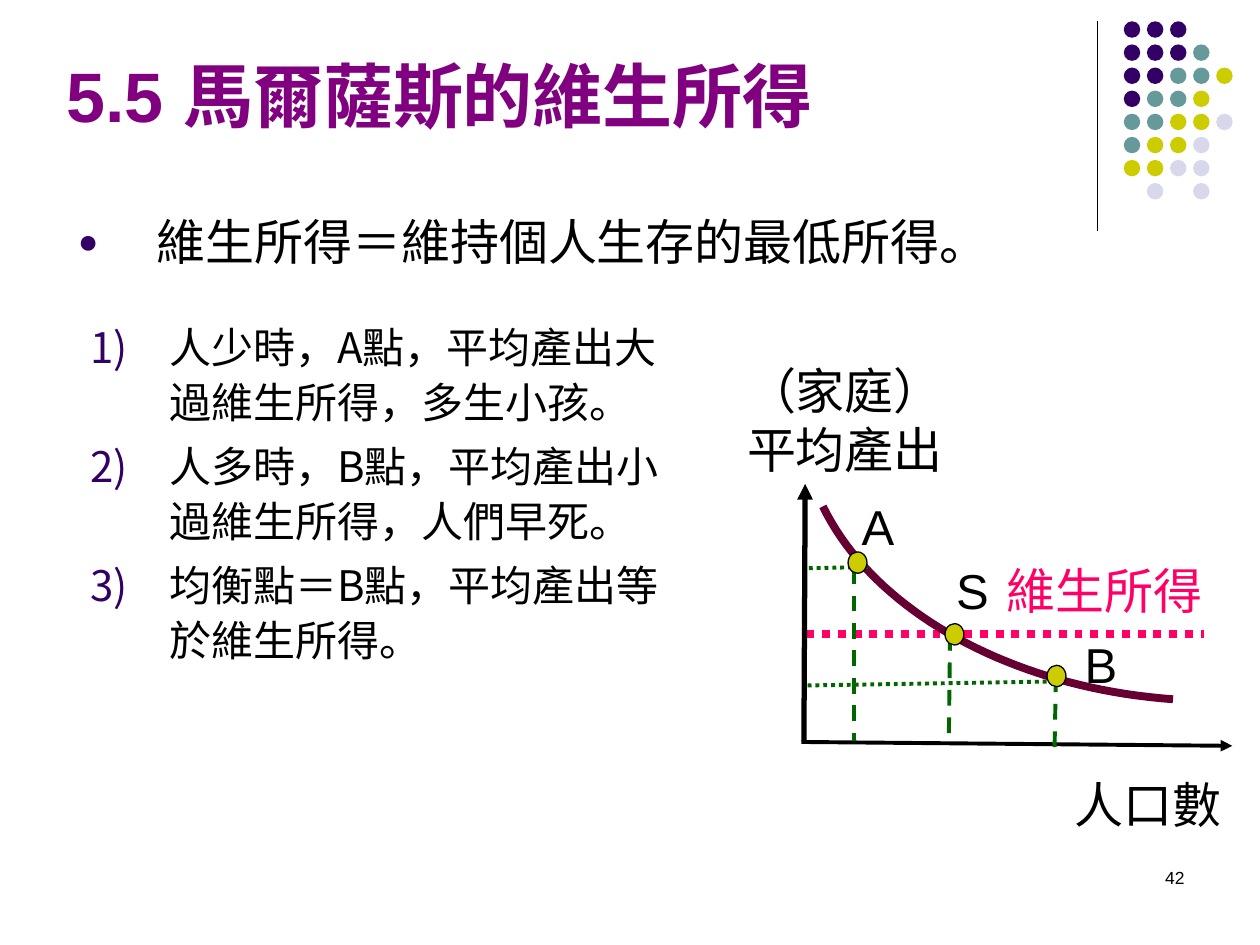
from lxml import etree
from pptx import Presentation
from pptx.dml.color import RGBColor
from pptx.enum.dml import MSO_LINE
from pptx.enum.shapes import MSO_CONNECTOR, MSO_SHAPE
from pptx.enum.text import MSO_ANCHOR, MSO_AUTO_SIZE, PP_ALIGN
from pptx.oxml.ns import qn
from pptx.util import Pt

OVAL = MSO_SHAPE.OVAL
STRAIGHT = MSO_CONNECTOR.STRAIGHT
DOT, DASH = MSO_LINE.ROUND_DOT, MSO_LINE.DASH
BOTTOM, TOP = MSO_ANCHOR.BOTTOM, MSO_ANCHOR.TOP
RIGHT = PP_ALIGN.RIGHT
FIT = MSO_AUTO_SIZE.SHAPE_TO_FIT_TEXT

CJK = "Noto Sans CJK TC"
BLACK, NAVY, GOLD = "000000", "330066", "CCCC00"
PINK, GREEN, WINE = "FF0066", "006600", "660033"

TITLE = "5.5 馬爾薩斯的維生所得"
LEAD = "維生所得＝維持個人生存的最低所得。"
STEPS = [
    "人少時，A點，平均產出大過維生所得，多生小孩。",
    "人多時，B點，平均產出小過維生所得，人們早死。",
    "均衡點＝B點，平均產出等於維生所得。",
]

# One letter per dot of the corner pattern
TINTS = {"n": NAVY, "t": "669999", "g": GOLD, "p": "D8D8EC"}
DOTS = ["nnn", "nnnt", "nnttg", "nttg", "ttggp", "tggp", "ggpp", " p p"]
DOT_X, DOT_Y, DOT_STEP, DOT_SIZE = 642.2, 12.2, 13.2, 9.4

# x1, y1, x2, y2, colour, width, dash, arrow
RULE = (627, 12, 627, 132, BLACK, 0.75, None, False)
AXES = [
    (460.8, 362.2, 688.3, 362.2, PINK, 4.5, DOT, False),
    (457.9, 424, 704.2, 426.2, BLACK, 2.25, None, True),
    (459.4, 423.4, 460.1, 276.5, BLACK, 3, None, True),
]
GUIDES = [
    (x1, y1, x2, y2, GREEN, 2.25, dash, False)
    for x1, y1, x2, y2, dash in [
        (542.9, 362.9, 542.2, 422.6, DASH),
        (488.2, 324.7, 488.2, 423.4, DASH),
        (462.2, 324.7, 496.8, 324, DOT),
        (603.4, 386.6, 602.6, 428.4, DASH),
        (461.5, 391.7, 598.3, 389.5, DOT),
    ]
]
CURVE = [(670.3, 399.6), (578.9, 393.1), (499.7, 349.9), (470.2, 289.4)]
POINTS = [(540, 356.4), (484.6, 315.4), (598.3, 380.2)]

# lines, left, top, width, height, colour
LABELS = [
    (["人口數"], 607, 439.2, 98.6, 41, BLACK),
    (["（家庭）", "平均產出"], 419.8, 202.3, 126.7, 74.2, BLACK),
    (["維生所得"], 568.1, 316.8, 126.7, 41, PINK),
    (["S"], 539.3, 316.8, 33.1, 41, BLACK),
    (["A"], 485.3, 280.1, 33.1, 41, BLACK),
    (["B"], 612.7, 359.3, 33.1, 41, BLACK),
]


def rgb(code):
    return RGBColor.from_string(code)


def add_line(shapes, x1, y1, x2, y2, color, width, dash, arrow):
    link = shapes.add_connector(STRAIGHT, Pt(x1), Pt(y1), Pt(x2), Pt(y2))
    link.line.color.rgb = rgb(color)
    link.line.width = Pt(width)
    if dash:
        link.line.dash_style = dash
    props = link._element.spPr
    if arrow:
        etree.SubElement(props.find(qn("a:ln")), qn("a:tailEnd"), type="triangle")
    etree.SubElement(props, qn("a:effectLst"))


def add_oval(shapes, x, y, w, h, color, edge=None):
    oval = shapes.add_shape(OVAL, Pt(x), Pt(y), Pt(w), Pt(h))
    oval.shadow.inherit = False
    oval.fill.solid()
    oval.fill.fore_color.rgb = rgb(color)
    if edge:
        oval.line.color.rgb = rgb(edge)
        oval.line.width = Pt(0.75)
    else:
        oval.line.fill.background()


def add_text(shapes, lines, x, y, w, h, color=BLACK, size=28, font="Arial",
             bold=False, wrap=True, anchor=TOP):
    """Add a text box with one paragraph per line; return its paragraphs."""
    box = shapes.add_textbox(Pt(x), Pt(y), Pt(w), Pt(h))
    frame = box.text_frame
    frame.word_wrap = wrap
    frame.vertical_anchor = anchor
    if not wrap:
        frame.auto_size = FIT
    for i, line in enumerate(lines):
        para = frame.add_paragraph() if i else frame.paragraphs[0]
        run = para.add_run()
        run.text = line
        run.font.name = font
        run.font.size = Pt(size)
        run.font.bold = bold
        run.font.color.rgb = rgb(color)
        etree.SubElement(run.font._element, qn("a:ea"), typeface=CJK)
    return frame.paragraphs


def add_bullet(para, spacing, before, kind, **attrs):
    """Give a paragraph a hanging indent and a navy bullet or number."""
    para.line_spacing = spacing
    para.space_before = Pt(before)
    props = para._p.get_or_add_pPr()
    props.set("marL", str(Pt(45)))
    props.set("indent", str(Pt(-45)))
    tint = etree.SubElement(props, qn("a:buClr"))
    etree.SubElement(tint, qn("a:srgbClr"), val=NAVY)
    if kind == "a:buChar":
        etree.SubElement(props, qn("a:buSzPct"), val="70000")
        etree.SubElement(props, qn("a:buFont"), typeface="Arial")
    etree.SubElement(props, qn(kind), **attrs)


def add_curve(shapes, ends, count=40):
    """Trace a cubic Bezier curve through short segments."""
    spots = []
    for i in range(count + 1):
        t = i / count
        parts = [(1 - t) ** 3, 3 * t * (1 - t) ** 2, 3 * t * t * (1 - t), t ** 3]
        spots.append(tuple(
            Pt(sum(part * end[axis] for part, end in zip(parts, ends)))
            for axis in (0, 1)))
    pen = shapes.build_freeform(*spots[0])
    pen.add_line_segments(spots[1:], close=False)
    curve = pen.convert_to_shape()
    curve.shadow.inherit = False
    curve.fill.background()
    curve.line.color.rgb = rgb(WINE)
    curve.line.width = Pt(4.5)


def main():
    deck = Presentation()
    deck.slide_width, deck.slide_height = Pt(720), Pt(540)
    shapes = deck.slides.add_slide(deck.slide_layouts[6]).shapes

    add_line(shapes, *RULE)
    for row, marks in enumerate(DOTS):
        for col, mark in enumerate(marks):
            if mark in TINTS:
                add_oval(shapes, DOT_X + col * DOT_STEP, DOT_Y + row * DOT_STEP,
                         DOT_SIZE, DOT_SIZE, TINTS[mark])

    page = add_text(shapes, ["42"], 516.2, 491.8, 167.8, 36, size=10)
    page[0].alignment = RIGHT
    add_text(shapes, [TITLE], 31, 0, 599, 81.4, "800080", 40, bold=True,
             anchor=BOTTOM)
    lead = add_text(shapes, [LEAD], 37.4, 110.9, 634.3, 64.8)
    add_bullet(lead[0], 1.2, 5.6, "a:buChar", char="●")
    steps = add_text(shapes, STEPS, 44.6, 177.1, 355, 260, size=24, font=CJK)
    for para in steps:
        add_bullet(para, 1.1, 4.8, "a:buAutoNum", type="arabicParenR")

    for line in AXES:
        add_line(shapes, *line)
    add_curve(shapes, CURVE)
    for line in GUIDES:
        add_line(shapes, *line)
    for label in LABELS:
        add_text(shapes, *label, wrap=False)
    for x, y in POINTS:
        add_oval(shapes, x, y, 10.8, 12.2, GOLD, BLACK)

    deck.save("out.pptx")


if __name__ == "__main__":
    main()
